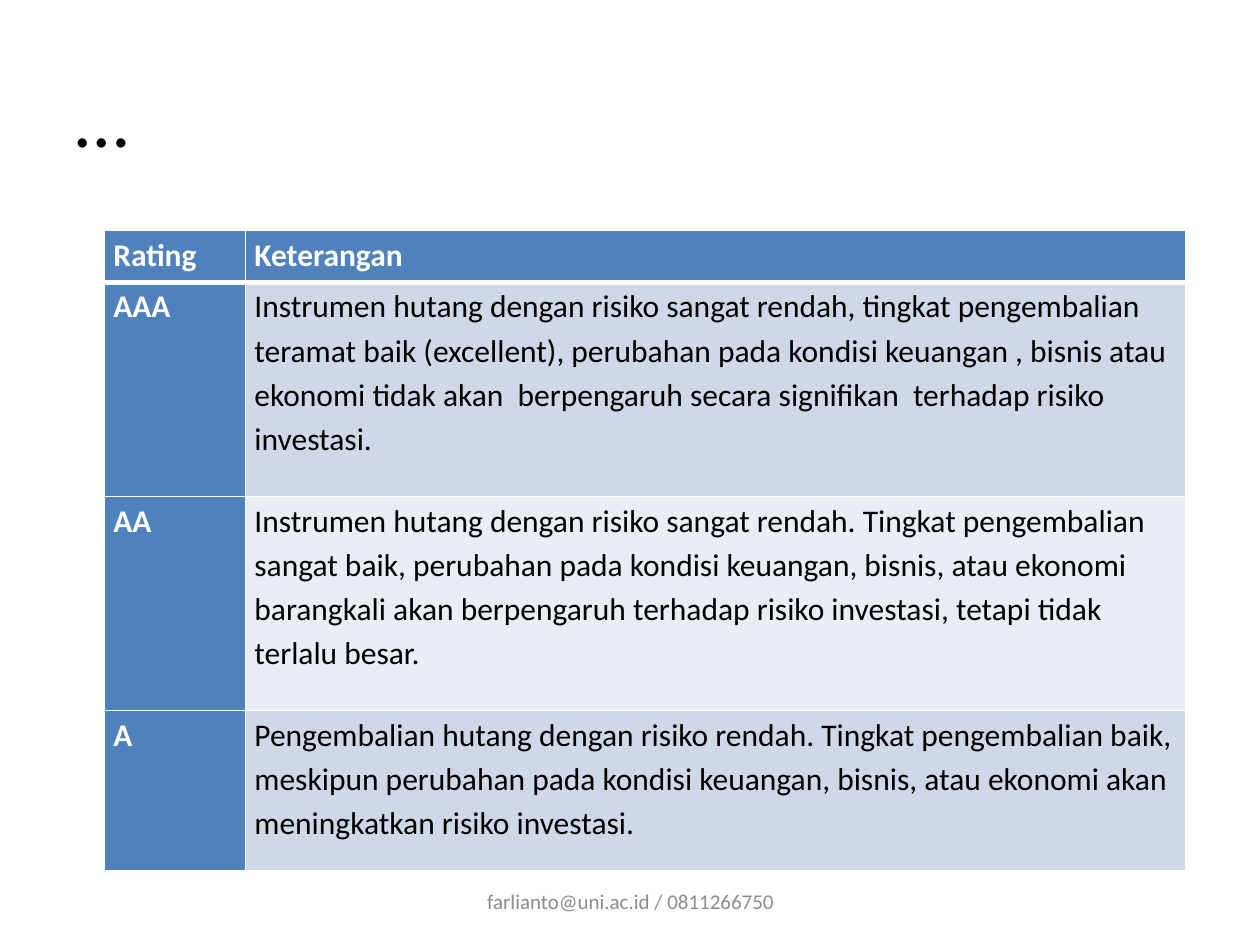
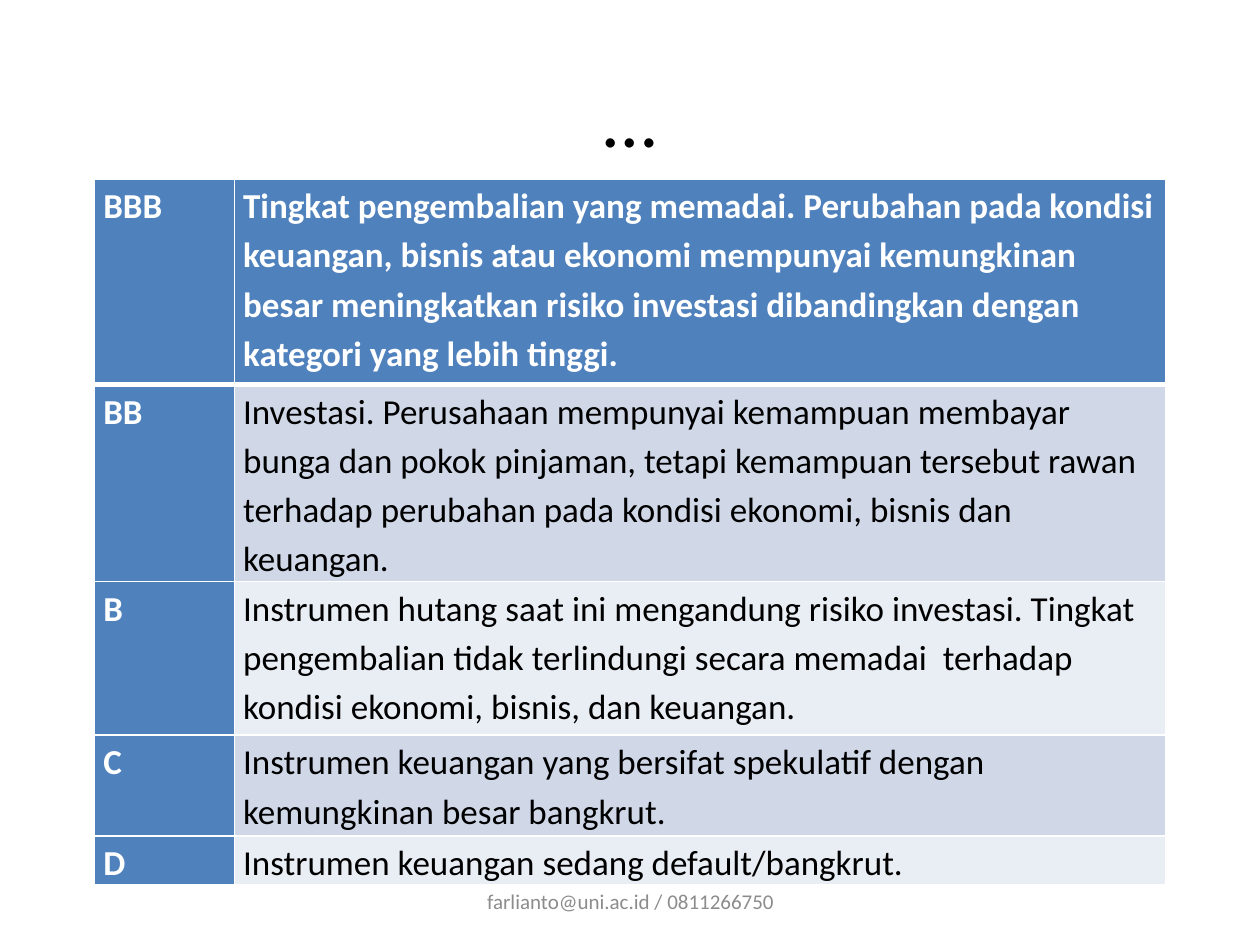
"""Build two slides with tables that explain bond ratings."""
from lxml.etree import SubElement
from pptx import Presentation
from pptx.dml.color import RGBColor
from pptx.enum.text import MSO_ANCHOR as Anchor, PP_ALIGN as Align
from pptx.oxml.ns import qn
from pptx.util import Inches, Pt

FONT = "Calibri"
WHITE = RGBColor(0xFF, 0xFF, 0xFF)
BLACK = RGBColor(0, 0, 0)
GREY = RGBColor(0x8C, 0x8C, 0x8C)
BLUE = RGBColor(0x4F, 0x81, 0xBD)
BANDS = [RGBColor(0xE9, 0xED, 0xF4), RGBColor(0xD0, 0xD8, 0xE8)]
FOOTER = "farlianto@uni.ac.id / 0811266750"

SLIDES = [
    {
        "align": Align.LEFT, "size": 18, "at": (0.83, 1.83),
        "columns": [1.12, 7.46], "heights": [0.41, 1.7, 1.7, 1.27],
        "rows": [
            ("Rating", "Keterangan"),
            ("AAA", "Instrumen hutang dengan risiko sangat rendah, tingkat pengembalian "
             "teramat baik (excellent), perubahan pada kondisi keuangan , bisnis atau "
             "ekonomi tidak akan  berpengaruh secara signifikan  terhadap risiko investasi."),
            ("AA", "Instrumen hutang dengan risiko sangat rendah. Tingkat pengembalian "
             "sangat baik, perubahan pada kondisi keuangan, bisnis, atau ekonomi "
             "barangkali akan berpengaruh terhadap risiko investasi, tetapi tidak "
             "terlalu besar."),
            ("A", "Pengembalian hutang dengan risiko rendah. Tingkat pengembalian baik, "
             "meskipun perubahan pada kondisi keuangan, bisnis, atau ekonomi akan "
             "meningkatkan risiko investasi."),
        ],
    },
    {
        "align": Align.CENTER, "size": 20, "at": (0.75, 1.42),
        "columns": [1.11, 7.39], "heights": [1.63, 1.22, 1.22, 0.8, 0.39],
        "rows": [
            ("BBB", "Tingkat pengembalian yang memadai. Perubahan pada kondisi "
             "keuangan, bisnis atau ekonomi mempunyai kemungkinan besar meningkatkan "
             "risiko investasi dibandingkan dengan kategori yang lebih tinggi."),
            ("BB", "Investasi. Perusahaan mempunyai kemampuan membayar bunga dan pokok "
             "pinjaman, tetapi kemampuan tersebut rawan terhadap perubahan pada kondisi "
             "ekonomi, bisnis dan keuangan."),
            ("B", "Instrumen hutang saat ini mengandung risiko investasi. Tingkat "
             "pengembalian tidak terlindungi secara memadai  terhadap kondisi ekonomi, "
             "bisnis, dan keuangan."),
            ("C", "Instrumen keuangan yang bersifat spekulatif dengan kemungkinan besar "
             "bangkrut."),
            ("D", "Instrumen keuangan sedang default/bangkrut."),
        ],
    },
]


def write(frame, text, size, color, bold=False, **paragraph_format):
    """Put one formatted paragraph into a text frame."""
    para = frame.paragraphs[0]
    for name, value in paragraph_format.items():
        setattr(para, name, value)
    span = para.add_run()
    span.text = text
    for name, value in {"name": FONT, "size": Pt(size), "bold": bold}.items():
        setattr(span.font, name, value)
    span.font.color.rgb = color


def add_borders(cell, widths):
    """Draw white borders of the given point widths around a cell."""
    for side, width in widths.items():
        line = SubElement(cell._tc.get_or_add_tcPr(), qn(f"a:ln{side}"), w=str(Pt(width)))
        SubElement(SubElement(line, qn("a:solidFill")), qn("a:srgbClr"), val=str(WHITE))


deck = Presentation()
deck.slide_width, deck.slide_height = Inches(10), Inches(7.5)

for content in SLIDES:
    page = deck.slides.add_slide(deck.slide_layouts[5])
    title = page.shapes.title
    title.left, title.top, title.width, title.height = map(Inches, (0.5, 0.3, 9, 1.25))
    title.text_frame.vertical_anchor = Anchor.MIDDLE
    write(title.text_frame, "…", 44, BLACK, alignment=content["align"])

    columns, heights, rows = content["columns"], content["heights"], content["rows"]
    left, top = content["at"]
    table = page.shapes.add_table(
        len(rows), len(columns), Inches(left), Inches(top),
        Inches(sum(columns)), Inches(sum(heights))).table
    for column, width in zip(table.columns, columns):
        column.width = Inches(width)
    for row, height in zip(table.rows, heights):
        row.height = Inches(height)

    for r, texts in enumerate(rows):
        for c, text in enumerate(texts):
            cell = table.cell(r, c)
            strong = r == 0 or c == 0
            cell.margin_left = cell.margin_right = Inches(0.07)
            cell.margin_top = cell.margin_bottom = 0
            add_borders(cell, {"L": 1, "R": 1, "T": 3 if r == 1 else 1, "B": 3 if r == 0 else 1})
            cell.fill.solid()
            cell.fill.fore_color.rgb = BLUE if strong else BANDS[r % 2]
            write(cell.text_frame, text, content["size"], WHITE if strong else BLACK, strong,
                  line_spacing=1.15, space_after=Pt(10 * c))

    footer = page.shapes.add_textbox(Inches(3.42), Inches(6.95), Inches(3.17), Inches(0.4))
    footer.text_frame.word_wrap = True
    footer.text_frame.vertical_anchor = Anchor.MIDDLE
    write(footer.text_frame, FOOTER, 12, GREY, alignment=Align.CENTER)

deck.save("out.pptx")
